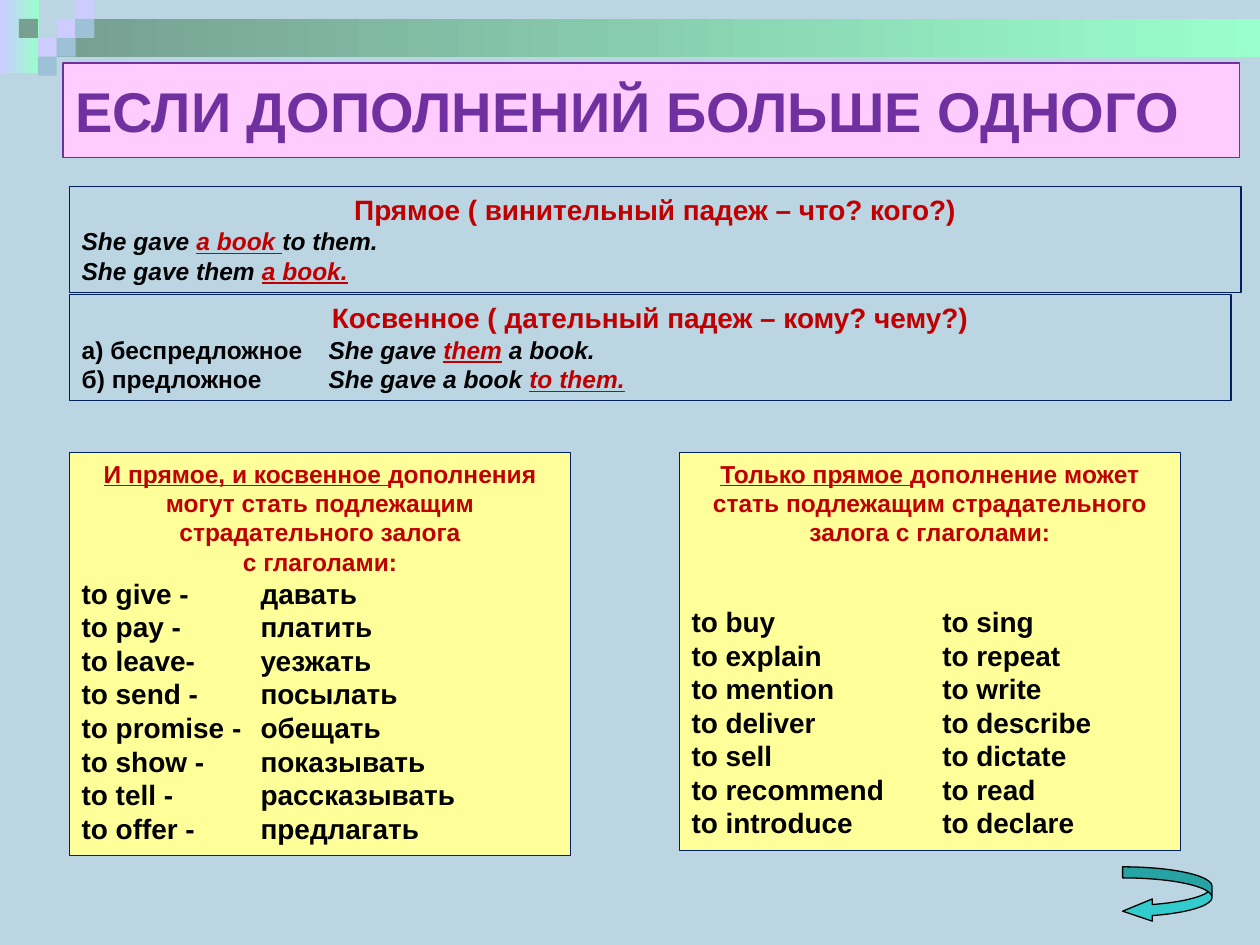
import pptx
import pptx.util
from lxml import etree
from pptx.dml.color import RGBColor
from pptx.enum.shapes import MSO_SHAPE
from pptx.enum.text import MSO_ANCHOR, PP_ALIGN
from pptx.oxml.ns import qn
from pptx.util import Inches

BACKGROUND = RGBColor(0xBB, 0xD5, 0xE3)
LILAC = RGBColor(0xCC, 0xCC, 0xFF)
MINT = RGBColor(0x99, 0xFF, 0xCC)
SAGE = RGBColor(0x77, 0x9F, 0x92)
BLUE = RGBColor(0x9D, 0xC2, 0xD7)
PINK = RGBColor(0xFF, 0xCC, 0xFF)
PURPLE = RGBColor(0x70, 0x30, 0xA0)
NAVY = RGBColor(0x00, 0x20, 0x60)
RED = RGBColor(0xC0, 0x00, 0x00)
YELLOW = RGBColor(0xFF, 0xFF, 0x99)
TEAL = RGBColor(0x33, 0xCC, 0xCC)
BLACK = RGBColor(0, 0, 0)

# Content: each line is a list of (text, flags); r = red, u = underlined, i = italic
TITLE = "ЕСЛИ ДОПОЛНЕНИЙ БОЛЬШЕ ОДНОГО"
DIRECT_HEAD = [[("Прямое ( винительный падеж – что? кого?)", "r")]]
DIRECT = [
    [("She gave ", "i"), ("a book ", "riu"), ("to them.", "i")],
    [("She gave them ", "i"), ("a book.", "riu")],
]
INDIRECT_HEAD = [[("Косвенное ( дательный падеж – кому? чему?)", "r")]]
INDIRECT = [
    [("а) беспредложное\t", ""), ("She gave ", "i"), ("them", "riu"), (" a book.", "i")],
    [("б) предложное\t", ""), ("She gave a book ", "i"), ("to them.", "riu")],
]
BOTH_HEAD = [
    [("И прямое, и косвенное ", "ru"), ("дополнения", "r")],
    [("могут стать подлежащим", "r")],
    [("страдательного залога", "r")],
    [("с глаголами:", "r")],
]
BOTH_VERBS = [
    ("to give -", "давать"), ("to pay -", "платить"), ("to leave-", "уезжать"),
    ("to send -", "посылать"), ("to promise -", "обещать"),
    ("to show -", "показывать"), ("to tell -", "рассказывать"),
    ("to offer -", "предлагать"),
]
ONLY_HEAD = [[
    ("Только прямое ", "ru"),
    ("дополнение может стать подлежащим страдательного залога с глаголами:", "r"),
]]
ONLY_VERBS = [
    ("to buy", "to sing"), ("to explain", "to repeat"), ("to mention", "to write"),
    ("to deliver", "to describe"), ("to sell", "to dictate"),
    ("to recommend", "to read"), ("to introduce", "to declare"),
]

# Corner mosaic: column, row, colour
CELL = 0.15
MOSAIC = [(3, 1, LILAC), (4, 0, LILAC), (4, 1, BLUE), (2, 2, LILAC),
          (1, 1, SAGE), (3, 2, BLUE), (2, 3, BLUE)]


def add_box(slide, box, fill=None, line=None, shape=MSO_SHAPE.RECTANGLE):
    """A list of two colours as fill gives a horizontal gradient."""
    sp = slide.shapes.add_shape(shape, *map(Inches, box))
    sp.shadow.inherit = False
    if isinstance(fill, list):
        sp.fill.gradient()
        sp.fill.gradient_angle = 0
        for stop, color in zip(sp.fill.gradient_stops, fill):
            stop.color.rgb = color
    elif fill is None:
        sp.fill.background()
    else:
        sp.fill.solid()
        sp.fill.fore_color.rgb = fill
    if line is None:
        sp.line.fill.background()
    else:
        sp.line.color.rgb = line
        sp.line.width = pptx.util.Pt(0.75)
    return sp


def set_tab(p, inches):
    tabs = etree.SubElement(p._p.get_or_add_pPr(), qn("a:tabLst"))
    etree.SubElement(tabs, qn("a:tab"), pos=str(Inches(inches)), algn="l")


def style(run, size, color, italic=False, underline=False):
    font = run.font
    font.name, font.size, font.bold = "Arial", pptx.util.Pt(size), True
    font.italic, font.underline = italic, underline
    font.color.rgb = color


def fill_text(sp, head, head_size, body, body_size, tab=None, gap=0):
    tf = sp.text_frame
    tf.word_wrap = True
    tf.vertical_anchor = MSO_ANCHOR.TOP
    for i, parts in enumerate(head + body):
        is_head = i < len(head)
        p = tf.paragraphs[0] if i == 0 else tf.add_paragraph()
        p.alignment = PP_ALIGN.CENTER if is_head else PP_ALIGN.LEFT
        if i == len(head) and gap:
            p.space_before = pptx.util.Pt(gap)
        if tab and not is_head:
            set_tab(p, tab)
        for text, flags in parts:
            r = p.add_run()
            r.text = text
            style(r, head_size if is_head else body_size,
                  RED if "r" in flags else BLACK, "i" in flags, "u" in flags)


def verb_lines(pairs):
    return [[("\t".join(pair), "")] for pair in pairs]


def main():
    prs = pptx.Presentation()
    prs.slide_width, prs.slide_height = Inches(10), Inches(7.5)
    slide = prs.slides.add_slide(prs.slide_layouts[6])
    slide.background.fill.solid()
    slide.background.fill.fore_color.rgb = BACKGROUND

    # Top decoration
    add_box(slide, (0, 0, 0.31, 0.58), [LILAC, MINT])
    add_box(slide, (0.45, 0.15, 9.55, 0.3), [SAGE, MINT])
    for col, row, color in MOSAIC:
        add_box(slide, (col * CELL, row * CELL, CELL, CELL), color)

    # Title
    sp = add_box(slide, (0.5, 0.5, 9.34, 0.75), PINK, PURPLE)
    tf = sp.text_frame
    tf.word_wrap = True
    tf.vertical_anchor = MSO_ANCHOR.MIDDLE
    tf.text = TITLE
    tf.paragraphs[0].alignment = PP_ALIGN.LEFT
    style(tf.paragraphs[0].runs[0], 32, PURPLE)

    # Return arrow
    sp = add_box(slide, (8.91, 6.88, 0.71, 0.44), TEAL, BLACK,
                 MSO_SHAPE.CURVED_LEFT_ARROW)
    for i, value in enumerate((0.2, 0.4, 0.535)):
        sp.adjustments[i] = value

    # Rules for the two kinds of object
    sp = add_box(slide, (0.55, 1.48, 9.3, 0.84), None, NAVY)
    fill_text(sp, DIRECT_HEAD, 16, DIRECT, 14)
    sp = add_box(slide, (0.55, 2.34, 9.22, 0.84), None, NAVY)
    fill_text(sp, INDIRECT_HEAD, 16, INDIRECT, 14, tab=1.96)

    # Verb lists
    sp = add_box(slide, (0.55, 3.59, 3.98, 3.2), YELLOW, NAVY)
    fill_text(sp, BOTH_HEAD, 14, verb_lines(BOTH_VERBS), 16, tab=1.42)
    sp = add_box(slide, (5.39, 3.59, 3.98, 3.16), YELLOW, NAVY)
    fill_text(sp, ONLY_HEAD, 14, verb_lines(ONLY_VERBS), 16, tab=1.99, gap=33)

    prs.save("out.pptx")


if __name__ == "__main__":
    main()
